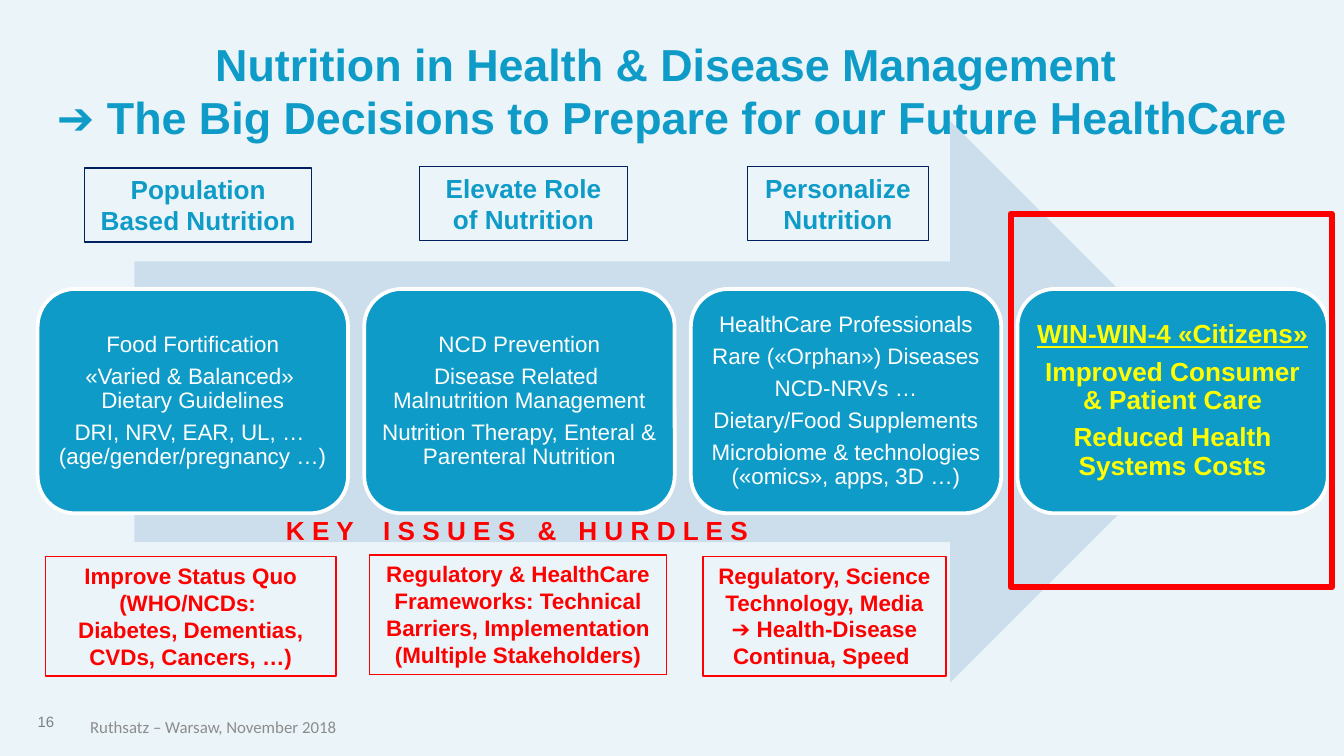
from copy import deepcopy
from dataclasses import dataclass

from pptx import Presentation
from pptx.dml.color import RGBColor
from pptx.enum.shapes import MSO_SHAPE
from pptx.enum.text import MSO_ANCHOR, PP_ALIGN
from pptx.oxml.ns import qn
from pptx.util import Inches, Pt

RECTANGLE = MSO_SHAPE.RECTANGLE
ROUNDED = MSO_SHAPE.ROUNDED_RECTANGLE
RIGHT_ARROW = MSO_SHAPE.RIGHT_ARROW
LEFT, CENTER = PP_ALIGN.LEFT, PP_ALIGN.CENTER
TOP, MIDDLE = MSO_ANCHOR.TOP, MSO_ANCHOR.MIDDLE


@dataclass(frozen=True)
class Theme:
    background: str = "EBF4F9"
    blue: str = "0F9BC7"
    navy: str = "002060"
    arrow: str = "CCDEEB"
    white: str = "FFFFFF"
    yellow: str = "FFFF00"
    red: str = "FF0000"
    number: str = "7B808B"
    footer: str = "8C8C8C"
    font: str = "Arial"
    footer_font: str = "Calibri"
    title_size: int = 24
    heading_size: int = 14
    body_size: int = 12
    footer_size: int = 9
    number_size: int = 8


THEME = Theme()
BOX_INSETS = (0.1, 0.04)

CARD_LEFT, CARD_TOP, CARD_WIDTH, CARD_HEIGHT = 0.28, 2.15, 2.31, 1.67
CARD_PITCH = 2.43
CARDS = [
    ["Food Fortification", "«Varied & Balanced» \nDietary Guidelines",
     "DRI, NRV, EAR, UL, … \n(age/gender/pregnancy …)"],
    ["NCD Prevention", "Disease Related \nMalnutrition Management",
     "Nutrition Therapy, Enteral & Parenteral Nutrition"],
    ["HealthCare Professionals", "Rare («Orphan») Diseases", "NCD-NRVs …",
     "Dietary/Food Supplements", "Microbiome & technologies («omics», apps, 3D …)"],
]
OUTCOMES = ["WIN-WIN-4 «Citizens»", "Improved Consumer & Patient Care",
            "Reduced Health Systems Costs"]

HEADINGS = [
    ((0.63, 1.25, 1.69, 0.55), "Population Based Nutrition"),
    ((3.12, 1.24, 1.55, 0.55), "Elevate Role of Nutrition"),
    ((5.56, 1.24, 1.35, 0.55), "Personalize Nutrition"),
]
HURDLES = [
    ((0.34, 4.14, 2.16, 0.89), MIDDLE,
     ["Improve Status Quo (WHO/NCDs: \nDiabetes, Dementias, CVDs, Cancers, …)"]),
    ((2.75, 4.13, 2.21, 0.89), TOP,
     ["Regulatory & HealthCare Frameworks: Technical Barriers, Implementation",
      "(Multiple Stakeholders)"]),
    ((5.23, 4.14, 1.81, 0.89), TOP,
     ["Regulatory, Science Technology, Media ➔ Health-Disease Continua, Speed "]),
]
HURDLES_LABEL = [("K E Y", 0), (" ", 11.7), ("I S S U E S", 0), (" ", 7.8),
                 ("&", 0), (" ", 7.8), ("H U R D L E S", 0)]


def add_run(paragraph, text, size, color, bold, font, tracking=0):
    run = paragraph.add_run()
    run.text = text
    run.font.name = font
    run.font.size = Pt(size)
    run.font.bold = bold
    run.font.color.rgb = RGBColor.from_string(color)
    if tracking:
        run._r.get_or_add_rPr().set("spc", str(round(tracking * 100)))
    return run


def write_text(shape, paragraphs, *, size, color, bold=False, font=THEME.font,
               align=CENTER, anchor=TOP, insets=(0, 0), wrap=True,
               line_spacing=None, space_after=None):
    frame = shape.text_frame
    frame.word_wrap = wrap
    frame.vertical_anchor = anchor
    frame.margin_left = frame.margin_right = Inches(insets[0])
    frame.margin_top = frame.margin_bottom = Inches(insets[1])
    for index, text in enumerate(paragraphs):
        paragraph = frame.add_paragraph() if index else frame.paragraphs[0]
        paragraph.alignment = align
        if line_spacing:
            paragraph.line_spacing = line_spacing
        if space_after:
            paragraph.space_after = Pt(space_after)
        for number, line in enumerate(text.split("\n")):
            if number:
                paragraph.add_line_break()
            run = add_run(paragraph, line, size, color, bold, font)
        for line_break in paragraph._p.findall(qn("a:br")):
            line_break.append(deepcopy(run._r.rPr))


def add_box(slide, kind, bounds, fill=None, line=None, line_width=0.75):
    shape = slide.shapes.add_shape(kind, *map(Inches, bounds))
    shape.shadow.inherit = False
    if fill:
        shape.fill.solid()
        shape.fill.fore_color.rgb = RGBColor.from_string(fill)
    else:
        shape.fill.background()
    if line:
        shape.line.color.rgb = RGBColor.from_string(line)
        shape.line.width = Pt(line_width)
    else:
        shape.line.fill.background()
    return shape


def add_label(slide, bounds, text, **text_format):
    box = slide.shapes.add_textbox(*map(Inches, bounds))
    write_text(box, [text], **text_format)


def add_card(slide, index, paragraphs, size=THEME.body_size, color=THEME.white,
             bold=False, inset=0.05):
    bounds = (CARD_LEFT + index * CARD_PITCH, CARD_TOP, CARD_WIDTH, CARD_HEIGHT)
    card = add_box(slide, ROUNDED, bounds, THEME.blue, THEME.white, 2)
    write_text(card, paragraphs, size=size, color=color, bold=bold, anchor=MIDDLE,
               insets=(inset, inset), line_spacing=0.9, space_after=0.35 * size)
    return card


def add_hurdles_label(slide):
    box = slide.shapes.add_textbox(*map(Inches, (2.03, 3.79, 3.66, 0.32)))
    write_text(box, [], size=THEME.heading_size, color=THEME.red,
               insets=BOX_INSETS, wrap=False)
    paragraph = box.text_frame.paragraphs[0]
    paragraph.alignment = LEFT
    for text, tracking in HURDLES_LABEL:
        add_run(paragraph, text, THEME.heading_size, THEME.red, True,
                THEME.font, tracking)


def main():
    presentation = Presentation()
    presentation.slide_width = Inches(10)
    presentation.slide_height = Inches(10) * 9 // 16
    slide = presentation.slides.add_slide(presentation.slide_layouts[6])
    slide.background.fill.solid()
    slide.background.fill.fore_color.rgb = RGBColor.from_string(THEME.background)

    add_label(slide, (0.28, 5.3, 0.14, 0.18), "16", size=THEME.number_size,
              color=THEME.number, align=LEFT, wrap=False)
    add_label(slide, (0, 0.27, 10, 0.49),
              "Nutrition in Health & Disease Management \n"
              "➔ The Big Decisions to Prepare for our Future HealthCare",
              size=THEME.title_size, color=THEME.blue, bold=True)

    add_box(slide, RIGHT_ARROW, (1, 0.9, 8.16, 4.18), THEME.arrow)
    for index, paragraphs in enumerate(CARDS):
        add_card(slide, index, paragraphs)
    outcome_card = add_card(slide, len(CARDS), OUTCOMES, THEME.heading_size,
                            THEME.yellow, True, 0.06)
    outcome_card.text_frame.paragraphs[0].runs[0].font.underline = True

    for bounds, text in HEADINGS:
        heading = add_box(slide, RECTANGLE, bounds, line=THEME.navy)
        write_text(heading, [text], size=THEME.heading_size, color=THEME.blue,
                   bold=True, insets=BOX_INSETS)
    for bounds, anchor, paragraphs in HURDLES:
        hurdle = add_box(slide, RECTANGLE, bounds, line=THEME.red)
        write_text(hurdle, paragraphs, size=THEME.body_size, color=THEME.red,
                   bold=True, anchor=anchor, insets=BOX_INSETS)
    add_hurdles_label(slide)

    add_box(slide, RECTANGLE, (7.52, 1.59, 2.39, 2.78), line=THEME.red, line_width=3)
    footer = add_box(slide, RECTANGLE, (0.41, 5.26, 2.35, 0.29), THEME.background)
    write_text(footer, ["Ruthsatz – Warsaw, November 2018"], size=THEME.footer_size,
               color=THEME.footer, font=THEME.footer_font, anchor=MIDDLE,
               insets=(0.07, 0.04))
    presentation.save("out.pptx")


if __name__ == "__main__":
    main()
